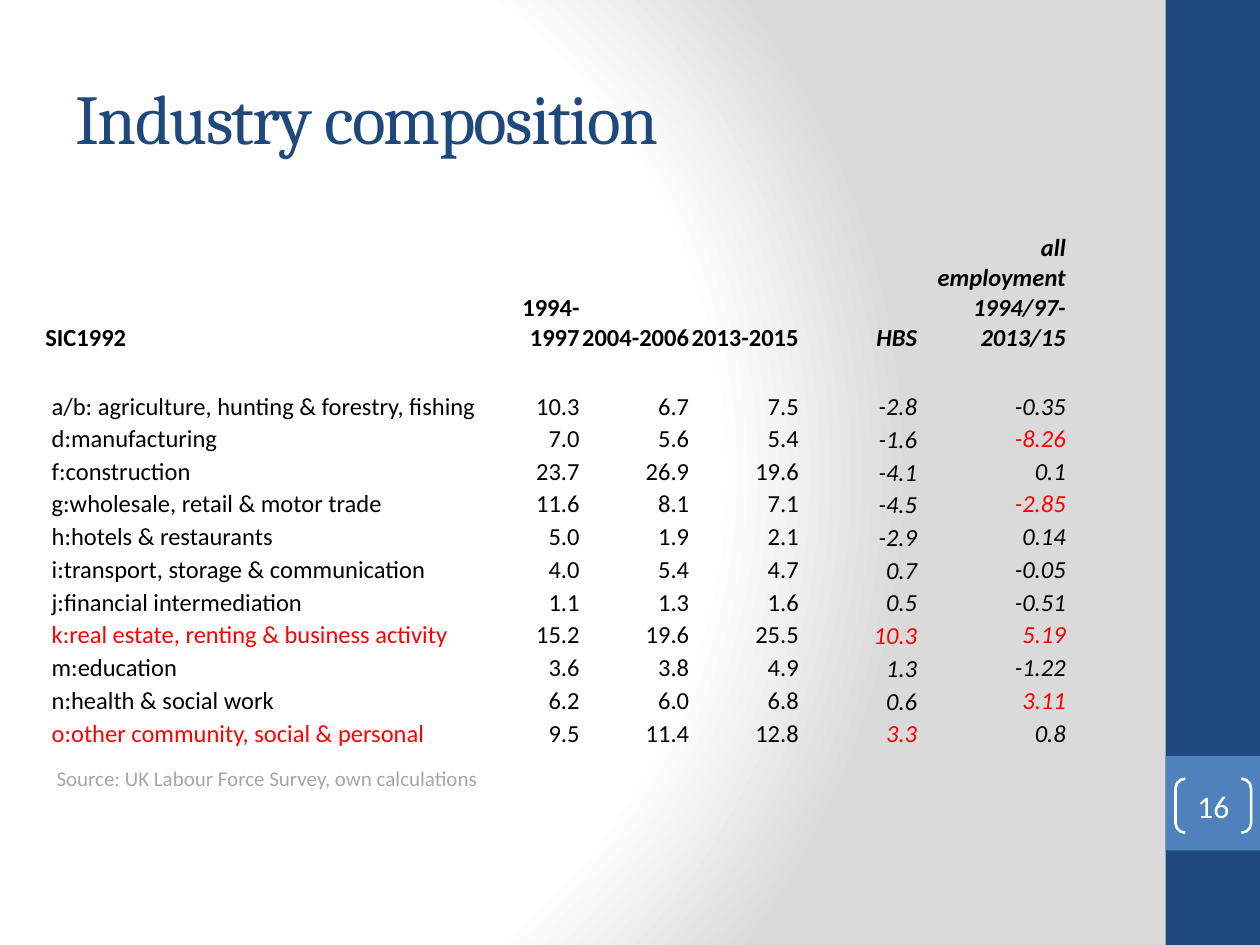
import pptx
import pptx.util
import pptx.oxml
import pptx.oxml.ns
import pptx.dml.color
import pptx.enum.shapes
import pptx.enum.text
from pptx.util import Inches

SHAPE = pptx.enum.shapes.MSO_SHAPE
ALIGN = pptx.enum.text.PP_ALIGN
ANCHOR = pptx.enum.text.MSO_ANCHOR
NAVY, BLUE, WHITE, BLACK, RED, GREY = (
    "1F497D", "4F81BD", "FFFFFF", "000000", "FF0000", "A6A6A6")


def color(hex_code):
    return pptx.dml.color.RGBColor.from_string(hex_code)


def format_text(frame, size, hex_code, align=ALIGN.LEFT, font="Calibri", bold=False, italic=False):
    """Format every run of a text frame alike."""
    for para in frame.paragraphs:
        para.alignment = align
        for span in para.runs:
            span.font.size = pptx.util.Pt(size)
            span.font.name = font
            span.font.bold = bold
            span.font.italic = italic
            span.font.color.rgb = color(hex_code)


deck = pptx.Presentation()
deck.slide_width, deck.slide_height = Inches(10), Inches(7.5)
page = deck.slides.add_slide(deck.slide_layouts[5])

# Radial background, white on the left and grey on the right
page.background.fill.gradient()
gradient = page.element.find(".//" + pptx.oxml.ns.qn("a:gradFill"))
stops = "".join(
    f'<a:gs pos="{position}000"><a:srgbClr val="{hex_code}"/></a:gs>'
    for position, hex_code in [(0, WHITE), (75, WHITE), (100, "DADADA")])
gradient.getparent().replace(gradient, pptx.oxml.parse_xml(
    f'<a:gradFill {pptx.oxml.ns.nsdecls("a")} rotWithShape="1"><a:gsLst>{stops}</a:gsLst>'
    '<a:path path="circle"><a:fillToRect l="20000" t="50000" r="100000" b="50000"/></a:path>'
    '</a:gradFill>'))

# Side band with the number field
for top, height, hex_code in [(0, 7.5, NAVY), (6, 0.75, BLUE)]:
    band = page.shapes.add_shape(
        SHAPE.RECTANGLE, Inches(9.25), Inches(top), Inches(0.75), Inches(height))
    band.shadow.inherit = False
    band.fill.solid()
    band.fill.fore_color.rgb = color(hex_code)
    band.line.fill.background()

number = page.shapes.add_shape(
    SHAPE.DOUBLE_BRACKET, Inches(9.33), Inches(6.18), Inches(0.6), Inches(0.43))
number.adjustments[0] = 0.18
number.shadow.inherit = False
number.fill.background()
number.line.color.rgb = color(WHITE)
number.line.width = pptx.util.Pt(1.5)
frame = number.text_frame
frame.margin_left = frame.margin_right = frame.margin_top = frame.margin_bottom = 0
frame.vertical_anchor = ANCHOR.MIDDLE
frame.text = "16"
format_text(frame, 18, WHITE, ALIGN.CENTER)

title = page.shapes.title
title.left, title.top = Inches(0.5), Inches(0.3)
title.width, title.height = Inches(8.33), Inches(1.25)
title.text_frame.text = "Industry composition"
title.text_frame.vertical_anchor = ANCHOR.MIDDLE
format_text(title.text_frame, 40, NAVY, font="Cambria")
title.text_frame.paragraphs[0].runs[0].font._element.set("spc", "-100")

# Table: industry shares by period and their change
rows = [
    ("SIC1992", "1994-1997", "2004-2006", "2013-2015", "HBS", "all employment 1994/97-2013/15"),
    ("a/b: agriculture, hunting & forestry, fishing", "10.3", "6.7", "7.5", "-2.8", "-0.35"),
    ("d:manufacturing", "7.0", "5.6", "5.4", "-1.6", "-8.26"),
    ("f:construction", "23.7", "26.9", "19.6", "-4.1", "0.1"),
    ("g:wholesale, retail & motor trade", "11.6", "8.1", "7.1", "-4.5", "-2.85"),
    ("h:hotels & restaurants", "5.0", "1.9", "2.1", "-2.9", "0.14"),
    ("i:transport, storage & communication", "4.0", "5.4", "4.7", "0.7", "-0.05"),
    ("j:financial intermediation", "1.1", "1.3", "1.6", "0.5", "-0.51"),
    ("k:real estate, renting & business activity", "15.2", "19.6", "25.5", "10.3", "5.19"),
    ("m:education", "3.6", "3.8", "4.9", "1.3", "-1.22"),
    ("n:health & social work", "6.2", "6.0", "6.8", "0.6", "3.11"),
    ("o:other community, social & personal", "9.5", "11.4", "12.8", "3.3", "0.8"),
]
red_cells = {(2, 5), (4, 5), (8, 0), (8, 4), (8, 5), (10, 5), (11, 0), (11, 4)}
column_widths = [3.46, 0.8, 0.87, 0.87, 0.94, 1.18]
row_heights = [1.02, 0.55] + [0.26] * 10

table = page.shapes.add_table(
    len(rows), len(column_widths), Inches(0.35), Inches(1.78),
    Inches(sum(column_widths)), Inches(sum(row_heights))).table
table.first_row = table.horz_banding = False
NO_STYLE = "{2D5ABB26-0587-4C30-8999-92F81FD0307C}"
table._tbl.tblPr.find(pptx.oxml.ns.qn("a:tableStyleId")).text = NO_STYLE
for column, width in zip(table.columns, column_widths):
    column.width = Inches(width)
for row, height in zip(table.rows, row_heights):
    row.height = Inches(height)

for r, row in enumerate(rows):
    for c, text in enumerate(row):
        cell = table.cell(r, c)
        cell.fill.background()
        is_label = c == 0 and r > 0
        cell.margin_left = Inches(0.06 if is_label else 0.01)
        cell.margin_right = cell.margin_top = Inches(0.01)
        cell.margin_bottom = 0
        cell.vertical_anchor = ANCHOR.BOTTOM if r < 2 or c == 4 else ANCHOR.MIDDLE
        cell.text_frame.text = text
        format_text(cell.text_frame, 14, RED if (r, c) in red_cells else BLACK,
                    ALIGN.RIGHT if c else ALIGN.LEFT, bold=r == 0, italic=c >= 4)

source = page.shapes.add_textbox(Inches(0.35), Inches(6.03), Inches(4.49), Inches(0.3))
source.text_frame.word_wrap = True
source.text_frame.text = "Source: UK Labour Force Survey, own calculations"
format_text(source.text_frame, 12, GREY)

deck.save("out.pptx")
